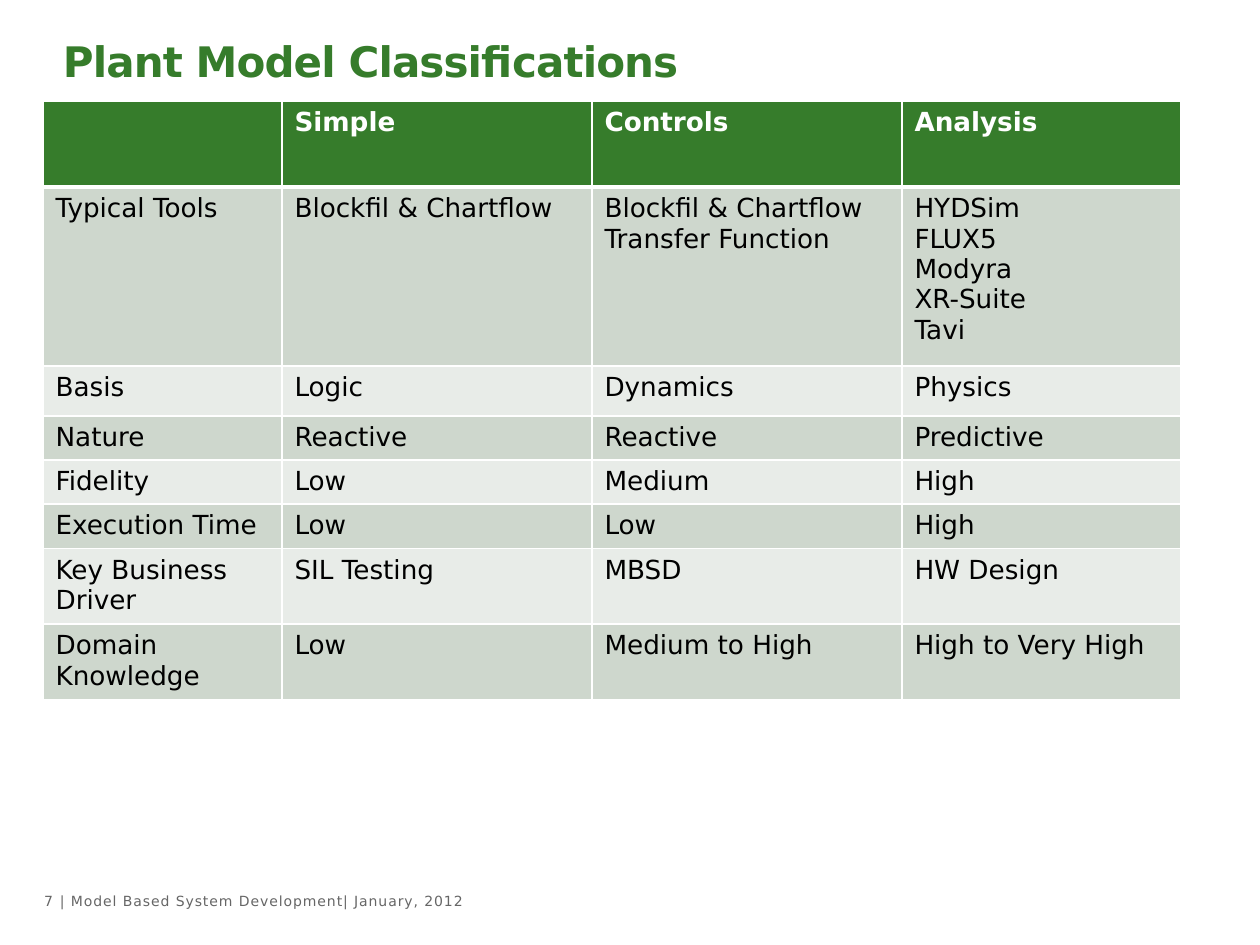
import dataclasses

import pptx
import pptx.dml.color
import pptx.enum.text
import pptx.oxml
import pptx.oxml.ns
import pptx.util

PX = 914400 // 126
FONT = "DejaVu Sans"
COLORS = {
    "green": "367C2B", "band": "CED7CD", "pale": "E8ECE8",
    "white": "FFFFFF", "black": "000000", "gray": "666666",
}
ALIGN = pptx.enum.text.PP_ALIGN
ANCHOR = pptx.enum.text.MSO_ANCHOR


@dataclasses.dataclass
class Label:
    text: str
    left: int
    top: int
    width: int
    height: int
    size: int = 8
    color: str = "gray"
    bold: bool = False
    track: int = 50
    align: ALIGN = ALIGN.LEFT
    anchor: ANCHOR = ANCHOR.MIDDLE
    line: int | None = None


LABELS = [
    Label("| Model Based System Development| January, 2012", 60, 882, 693, 38),
    Label("7", 6, 882, 47, 38, align=ALIGN.RIGHT),
    Label("Plant Model Classifications", 63, 40, 1134, 89, size=24, color="green",
          bold=True, track=-50, anchor=ANCHOR.TOP, line=26),
]

LEFT, TOP, HEIGHT = 43, 101, 597
COLS = [239, 310, 310, 279]
ROWS = [
    (86, ["", "Simple", "Controls", "Analysis"]),
    (179, ["Typical Tools", "Blockfil & Chartflow",
           "Blockfil & Chartflow\nTransfer Function",
           "HYDSim\nFLUX5\nModyra\nXR-Suite\nTavi"]),
    (50, ["Basis", "Logic", "Dynamics", "Physics"]),
    (43, ["Nature", "Reactive", "Reactive", "Predictive"]),
    (39, ["Fidelity", "Low", "Medium", "High"]),
    (40, ["Execution Time", "Low", "Low", "High"]),
    (48, ["Key Business Driver", "SIL Testing", "MBSD", "HW Design"]),
    (48, ["Domain Knowledge", "Low", "Medium to High", "High to Very High"]),
]


def px(count: int) -> pptx.util.Emu:
    return pptx.util.Emu(count * PX)


def rgb(name: str) -> pptx.dml.color.RGBColor:
    return pptx.dml.color.RGBColor.from_string(COLORS[name])


def style(frame, size: int, color: str, bold: bool, track: int = 0) -> None:
    for para in frame.paragraphs:
        for run in para.runs:
            font = run.font
            font.name, font.size, font.bold = FONT, pptx.util.Pt(size), bold
            font.color.rgb = rgb(color)
            if track:
                run._r.get_or_add_rPr().set("spc", str(track))


def draw_label(slide, label: Label) -> None:
    box = slide.shapes.add_textbox(
        px(label.left), px(label.top), px(label.width), px(label.height))
    frame = box.text_frame
    frame.word_wrap = True
    frame.margin_left = frame.margin_right = 0
    frame.margin_top = frame.margin_bottom = 0
    frame.vertical_anchor = label.anchor
    frame.text = label.text
    para = frame.paragraphs[0]
    para.alignment = label.align
    if label.line:
        para.line_spacing = pptx.util.Pt(label.line)
    style(frame, label.size, label.color, label.bold, label.track)


def add_edges(cell, widths: dict[str, int]) -> None:
    """Give each side of the cell a white line of the given points."""
    props = cell._tc.get_or_add_tcPr()
    for side, width in widths.items():
        props.append(pptx.oxml.parse_xml(
            f'<a:ln{side} {pptx.oxml.ns.nsdecls("a")} w="{pptx.util.Pt(width)}">'
            f'<a:solidFill><a:srgbClr val="{COLORS["white"]}"/></a:solidFill>'
            f'</a:ln{side}>'))


def draw_table(slide) -> None:
    shape = slide.shapes.add_table(
        len(ROWS), len(COLS), px(LEFT), px(TOP), px(sum(COLS)), px(HEIGHT))
    table = shape.table
    table.horz_banding = False
    for col, width in zip(table.columns, COLS):
        col.width = px(width)
    for i, (height, texts) in enumerate(ROWS):
        table.rows[i].height = px(height)
        head = i == 0
        fill = "green" if head else "band" if i % 2 else "pale"
        edges = {"L": 1, "R": 1, "T": 3 if i == 1 else 1, "B": 3 if head else 1}
        for j, text in enumerate(texts):
            cell = table.cell(i, j)
            add_edges(cell, edges)
            cell.fill.solid()
            cell.fill.fore_color.rgb = rgb(fill)
            cell.text_frame.text = text
            style(cell.text_frame, 15, "white" if head else "black", head)
    shape.height = px(HEIGHT)


def main() -> None:
    deck = pptx.Presentation()
    deck.slide_width, deck.slide_height = px(1260), px(945)
    slide = deck.slides.add_slide(deck.slide_layouts[6])
    for label in LABELS:
        draw_label(slide, label)
    draw_table(slide)
    deck.save("out.pptx")


if __name__ == "__main__":
    main()
